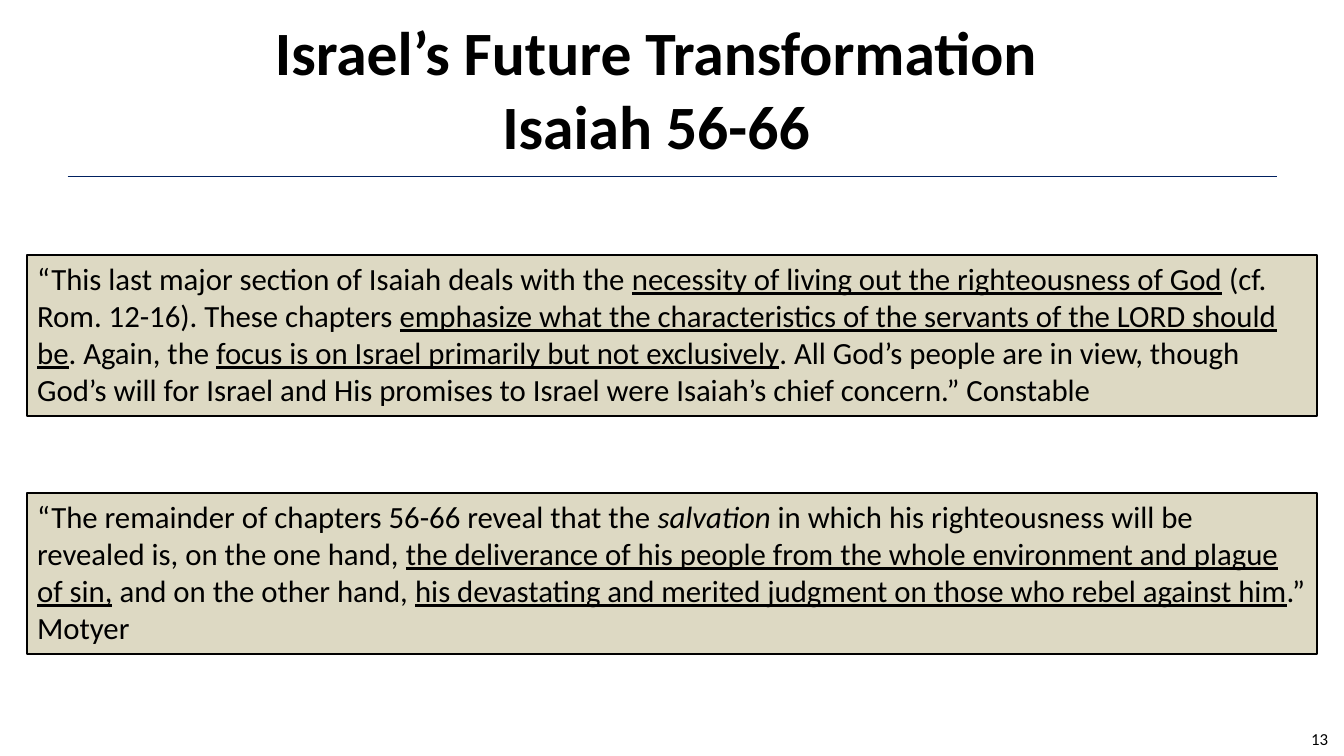
from lxml.etree import SubElement
from pptx import Presentation
from pptx.dml.color import RGBColor
from pptx.enum.shapes import MSO_CONNECTOR, MSO_SHAPE
from pptx.enum.text import MSO_ANCHOR, MSO_AUTO_SIZE, PP_ALIGN
from pptx.oxml.ns import qn
from pptx.util import Inches, Pt

COLORS = {"text": "000000", "rule": "002060", "panel": "DDD9C3"}
FONT = "Calibri"
PLAIN, UNDERLINE, ITALIC = "plain", "underline", "italic"

TITLE_LINES = ["Israel’s Future Transformation", "Isaiah 56-66"]
QUOTES = [
    [
        ("“This last major section of Isaiah deals with the ", PLAIN),
        ("necessity of living out the righteousness of God", UNDERLINE),
        (" (cf. Rom. 12-16). These chapters ", PLAIN),
        ("emphasize what the characteristics of the servants of the LORD should be", UNDERLINE),
        (". Again, the ", PLAIN),
        ("focus is on Israel primarily but not exclusively", UNDERLINE),
        (". All God’s people are in view, though God’s will for Israel and His promises "
         "to Israel were Isaiah’s chief concern.” Constable", PLAIN),
    ],
    [
        ("“The remainder of chapters 56-66 reveal that the ", PLAIN),
        ("salvation", ITALIC),
        (" in which his righteousness will be revealed is, on the one hand, ", PLAIN),
        ("the deliverance of his people from the whole environment and plague of sin,", UNDERLINE),
        (" and on the other hand, ", PLAIN),
        ("his devastating and merited judgment on those who rebel against him", UNDERLINE),
        (".” Motyer", PLAIN),
    ],
]


def color(name):
    """Return the named palette colour."""
    return RGBColor.from_string(COLORS[name])


def add_run(paragraph, text, size, bold=False, style=PLAIN):
    """Append one formatted run to a paragraph."""
    run = paragraph.add_run()
    run.text = text
    run.font.name, run.font.size, run.font.bold = FONT, Pt(size), bold
    run.font.underline = style == UNDERLINE
    run.font.italic = style == ITALIC
    run.font.color.rgb = color("text")


def place_title(slide, left, top, width, height):
    """Move the title placeholder into its box and fill its lines."""
    title = slide.shapes.title
    title.left, title.top, title.width, title.height = map(Inches, (left, top, width, height))
    frame = title.text_frame
    frame.auto_size = MSO_AUTO_SIZE.NONE
    frame.vertical_anchor = MSO_ANCHOR.MIDDLE
    heading = frame.paragraphs[0]
    heading.alignment = PP_ALIGN.CENTER
    for index, line in enumerate(TITLE_LINES):
        if index:
            heading.add_line_break()
        add_run(heading, line, 44, bold=True)


def add_rule(slide, left, top, width):
    """Draw the thin rule under the title."""
    rule = slide.shapes.add_connector(
        MSO_CONNECTOR.STRAIGHT, *map(Inches, (left, top, left + width, top)))
    rule.line.color.rgb = color("rule")
    rule.line.width = Pt(0.75)
    SubElement(rule._element.spPr, qn("a:effectLst"))


def add_quote(slide, quote, left, top, width, height):
    """Draw a bordered panel holding one quotation."""
    panel = slide.shapes.add_shape(
        MSO_SHAPE.RECTANGLE, *map(Inches, (left, top, width, height)))
    panel.shadow.inherit = False
    panel.fill.solid()
    panel.fill.fore_color.rgb = color("panel")
    panel.line.color.rgb = color("text")
    panel.line.width = Pt(1.5)
    frame = panel.text_frame
    frame.word_wrap = True
    frame.vertical_anchor = MSO_ANCHOR.TOP
    passage = frame.paragraphs[0]
    passage.alignment = PP_ALIGN.LEFT
    for text, style in quote:
        add_run(passage, text, 22, style=style)


def add_page_number(slide, number, left, top, width, height):
    """Write the page number at the right of its box."""
    page = slide.shapes.add_textbox(*map(Inches, (left, top, width, height)))
    frame = page.text_frame
    frame.word_wrap = True
    frame.vertical_anchor = MSO_ANCHOR.MIDDLE
    frame.paragraphs[0].alignment = PP_ALIGN.RIGHT
    add_run(frame.paragraphs[0], number, 12)


def main():
    """Build and save the slide."""
    deck = Presentation()
    deck.slide_width, deck.slide_height = Inches(13.33), Inches(7.5)
    slide = deck.slides.add_slide(deck.slide_layouts[5])
    place_title(slide, 0.51, 0.25, 12, 1.25)
    add_page_number(slide, "13", 12.27, 7.13, 1, 0.4)
    add_rule(slide, 0.67, 1.75, 12)
    first_top, pitch = 2.53, 2.36
    for row, quote in enumerate(QUOTES):
        add_quote(slide, quote, 0.27, first_top + row * pitch, 12.79, 1.6)
    deck.save("out.pptx")


if __name__ == "__main__":
    main()
